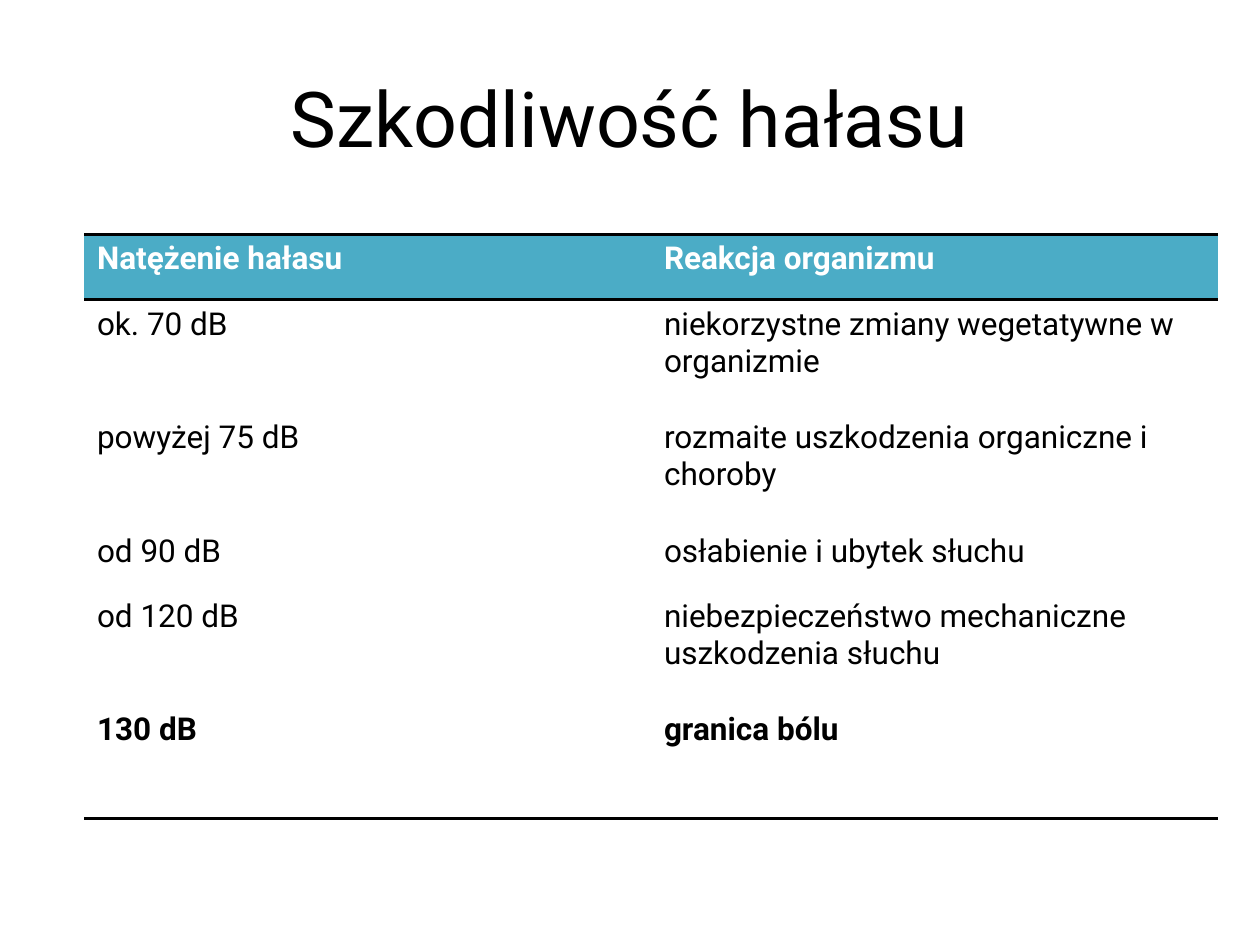
from lxml import etree
from pptx import Presentation
from pptx.dml.color import RGBColor
from pptx.enum import text
from pptx.oxml import ns
from pptx.util import Inches, Pt

TITLE = "Szkodliwość hałasu"
ROWS = [
    ("Natężenie hałasu", "Reakcja organizmu"),
    ("ok. 70 dB", "niekorzystne zmiany wegetatywne w organizmie"),
    ("powyżej 75 dB", "rozmaite uszkodzenia organiczne i choroby"),
    ("od 90 dB", "osłabienie i ubytek słuchu"),
    ("od 120 dB", "niebezpieczeństwo mechaniczne uszkodzenia słuchu"),
    ("130 dB", "granica bólu"),
]
ROW_HEIGHTS = [0.52, 0.9, 0.9, 0.52, 0.9, 0.9]
COLUMN_WIDTH = 4.5
COLORS = {"text": "000000", "header": "4BACC6", "white": "FFFFFF"}
FONT = "Roboto"
NO_STYLE = "{2D5ABB26-0587-4C30-8999-92F81FD0307C}"


def add_run(paragraph, content, size, color, bold=False):
    run = paragraph.add_run()
    run.text = content
    run.font.name = FONT
    run.font.size = Pt(size)
    run.font.bold = bold
    run.font.color.rgb = RGBColor.from_string(COLORS[color])


def add_border(cell, side, width=2):
    """Draw a cell edge; call before filling, as lines precede the fill."""
    properties = cell._tc.get_or_add_tcPr()
    line = etree.SubElement(properties, ns.qn(f"a:ln{side}"), w=str(Pt(width)))
    fill = etree.SubElement(line, ns.qn("a:solidFill"))
    etree.SubElement(fill, ns.qn("a:srgbClr"), val=COLORS["text"])


presentation = Presentation()
presentation.slide_width = Inches(10)
presentation.slide_height = Inches(7.5)
slide = presentation.slides.add_slide(presentation.slide_layouts[6])

# Title
title = slide.shapes.add_textbox(Inches(0.5), Inches(0.3), Inches(9), Inches(1.25))
title.text_frame.word_wrap = True
title.text_frame.vertical_anchor = text.MSO_ANCHOR.MIDDLE
title_paragraph = title.text_frame.paragraphs[0]
title_paragraph.alignment = text.PP_ALIGN.CENTER
add_run(title_paragraph, TITLE, 44, "text")

# Noise level table
frame = slide.shapes.add_table(
    len(ROWS), len(ROWS[0]), Inches(0.67), Inches(1.86),
    Inches(COLUMN_WIDTH * len(ROWS[0])), Inches(sum(ROW_HEIGHTS)))
table = frame.table
table.horz_banding = False
table._tbl.tblPr.find(ns.qn("a:tableStyleId")).text = NO_STYLE
for column in table.columns:
    column.width = Inches(COLUMN_WIDTH)

last = len(ROWS) - 1
for row_index, (labels, height) in enumerate(zip(ROWS, ROW_HEIGHTS)):
    table.rows[row_index].height = Inches(height)
    is_header = row_index == 0
    is_edge = row_index in (0, last)
    for column_index, label in enumerate(labels):
        cell = table.cell(row_index, column_index)
        if is_header:
            add_border(cell, "T")
        if is_edge:
            add_border(cell, "B")
        cell.fill.solid()
        cell.fill.fore_color.rgb = RGBColor.from_string(
            COLORS["header" if is_header else "white"])
        add_run(cell.text_frame.paragraphs[0], label, 18,
                "white" if is_header else "text", bold=is_edge)

presentation.save("out.pptx")
